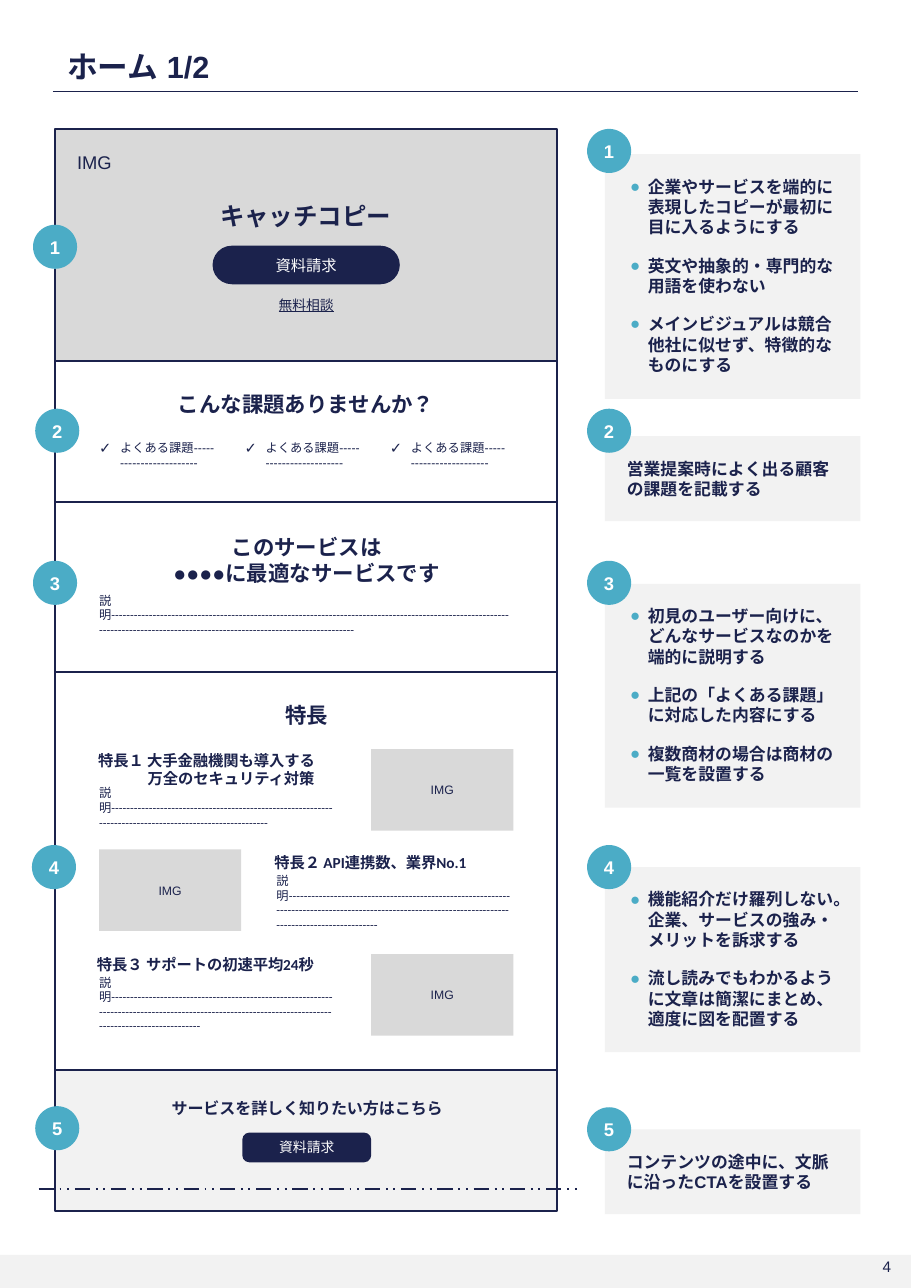
from pptx import Presentation
from pptx.dml.color import RGBColor
from pptx.enum.dml import MSO_LINE
from pptx.enum.lang import MSO_LANGUAGE_ID
from pptx.enum.shapes import MSO_CONNECTOR, MSO_SHAPE
from pptx.enum.text import MSO_ANCHOR, MSO_AUTO_SIZE, PP_ALIGN
from pptx.oxml.ns import qn
from pptx.util import Pt
from lxml import etree

RECT, ROUND, OVAL = MSO_SHAPE.RECTANGLE, MSO_SHAPE.ROUNDED_RECTANGLE, MSO_SHAPE.OVAL
LEFT, CENTER, RIGHT = PP_ALIGN.LEFT, PP_ALIGN.CENTER, PP_ALIGN.RIGHT
TOP, MIDDLE, BOTTOM = MSO_ANCHOR.TOP, MSO_ANCHOR.MIDDLE, MSO_ANCHOR.BOTTOM
FIT, FIXED = MSO_AUTO_SIZE.SHAPE_TO_FIT_TEXT, MSO_AUTO_SIZE.NONE
STRAIGHT, DASH = MSO_CONNECTOR.STRAIGHT, MSO_LINE.DASH_DOT_DOT
JAPANESE = MSO_LANGUAGE_ID.JAPANESE

PX = 9144
NAVY, TEAL, WHITE = "1B224C", "4BACC6", "FFFFFF"
PALE, GREY = "F2F2F2", "D9D9D9"

SECTIONS = [(117, 211, GREY), (328, 128, None), (456, 154, None),
            (610, 361, None), (971, 128, PALE)]
SECTION_BADGES = [(30, 204), (32, 371), (30, 509), (29, 767), (32, 1004)]
NOTES = [
    (117, 140, 222, ["企業やサービスを端的に表現したコピーが最初に目に入るようにする",
                     "英文や抽象的・専門的な用語を使わない",
                     "メインビジュアルは競合他社に似せず、特徴的なものにする"]),
    (371, 396, 77, ["営業提案時によく出る顧客の課題を記載する"]),
    (509, 530, 203, ["初見のユーザー向けに、どんなサービスなのかを端的に説明する",
                     "上記の「よくある課題」に対応した内容にする",
                     "複数商材の場合は商材の一覧を設置する"]),
    (767, 787, 168, ["機能紹介だけ羅列しない。企業、サービスの強み・メリットを訴求する",
                     "流し読みでもわかるように文章は簡潔にまとめ、適度に図を配置する"]),
    (1005, 1025, 77, ["コンテンツの途中に、文脈に沿ったCTAを設置する"]),
]
HEADINGS = [
    ((199, 182, 157, 27), ["キャッチコピー"], 16),
    ((160, 355, 236, 24), ["こんな課題ありませんか？"], 14),
    ((141, 485, 275, 47), ["このサービスは", "●●●●に最適なサービスです"], 14),
    ((259, 637, 39, 24), ["特長"], 14),
    ((154, 997, 250, 18), ["サービスを詳しく知りたい方はこちら"], 10.5),
]
FEATURES = [
    ((89, 681, 215, 34), "特長１ 大手金融機関も導入する\n万全のセキュリティ対策"),
    ((249, 774, 215, 17), "特長２ API連携数、業界No.1"),
    ((88, 867, 215, 17), "特長３ サポートの初速平均24秒"),
]
DESCRIPTIONS = [((90, 551, 376, 27), 174), ((90, 726, 215, 27), 104),
                ((251, 806, 215, 40), 148), ((90, 898, 215, 40), 148)]
IMAGE_SLOTS = [(337, 680), (90, 771), (337, 866)]


def emu(lengths):
    """Turn px lengths into EMU."""
    return [length * PX for length in lengths]


def color(hex_code):
    """Give the colour for a hex string."""
    return RGBColor.from_string(hex_code)


def add_bullet(para, mark, hang, margin, tint=None, percent=None):
    """Give a paragraph a hanging indent and, with a mark, a bullet."""
    props = para._p.get_or_add_pPr()
    props.set("marL", str(margin * PX))
    props.set("indent", str(-hang * PX))
    if tint:
        holder = etree.SubElement(props, qn("a:buClr"))
        etree.SubElement(holder, qn("a:srgbClr"), val=tint)
    if percent:
        etree.SubElement(props, qn("a:buSzPct"), val=str(percent * 1000))
    if mark:
        etree.SubElement(props, qn("a:buFont"), typeface="Arial")
        etree.SubElement(props, qn("a:buChar"), char=mark)


def write(box, texts, size, tint=NAVY, face="Arial", bold=False, align=LEFT,
          anchor=MIDDLE, inset=0, wrap=False, fit=FIXED, bullet=None, after=0,
          underline=False):
    """Fill a box with evenly formatted paragraphs."""
    frame = box.text_frame
    frame.word_wrap, frame.auto_size, frame.vertical_anchor = wrap, fit, anchor
    frame.margin_left = frame.margin_right = inset * PX
    frame.margin_top = frame.margin_bottom = inset * PX
    for index, text in enumerate(texts):
        para = frame.add_paragraph() if index else frame.paragraphs[0]
        para.text = text
        if bullet:
            add_bullet(para, *bullet)
        para.alignment = align
        para.space_after = Pt(after)
        font = para.font
        font.size, font.name, font.bold = Pt(size), face, bold
        font.underline, font.language_id = underline, JAPANESE
        font.color.rgb = color(tint)
        latin = para._p.pPr.find(qn("a:defRPr")).find(qn("a:latin"))
        latin.addnext(latin.makeelement(qn("a:ea"), {"typeface": face}))


def add_text(page, place, texts, size, **style):
    """Add a text box that grows with its text."""
    write(page.shapes.add_textbox(*emu(place)), texts, size, fit=FIT, **style)


def add_block(page, place, fill=None, line=None, kind=RECT, corner=None):
    """Add a flat preset shape."""
    block = page.shapes.add_shape(kind, *emu(place))
    block.shadow.inherit = False
    if corner is not None:
        block.adjustments[0] = corner
    if fill:
        block.fill.solid()
        block.fill.fore_color.rgb = color(fill)
    else:
        block.fill.background()
    if line:
        block.line.color.rgb = color(line)
        block.line.width = Pt(1.25)
    else:
        block.line.fill.background()
    return block


def add_rule(page, left, right, height, width, dash=None):
    """Add a horizontal line."""
    rule = page.shapes.add_connector(STRAIGHT, *emu((left, height, right, height)))
    rule.line.color.rgb = color(NAVY)
    rule.line.width = Pt(width)
    if dash:
        rule.line.dash_style = dash
    etree.SubElement(rule._element.spPr, qn("a:effectLst"))


def add_badge(page, left, top, number):
    """Add a numbered circle."""
    badge = add_block(page, (left, top, 40, 40), TEAL, kind=OVAL)
    write(badge, [str(number)], 12, WHITE, bold=True, align=CENTER)


def add_button(page, place, size, corner):
    """Add a rounded request button."""
    button = add_block(page, place, NAVY, kind=ROUND, corner=corner)
    write(button, ["資料請求"], size, WHITE, "Calibri", align=CENTER)


def add_note(page, number, badge_top, top, height, texts):
    """Add a grey remark panel with its badge."""
    panel = add_block(page, (549, top, 232, height), PALE)
    bullet = ("●", 16, 19, TEAL) if len(texts) > 1 else None
    write(panel, texts, 11, bold=True, anchor=TOP, inset=20, wrap=True,
          bullet=bullet, after=12)
    add_badge(page, 533, badge_top, number)


def add_frame(page):
    """Add the title, its rule and the footer."""
    add_block(page, (0, 1139, 827, 30), PALE)
    add_rule(page, 48, 779, 83, 1)
    title = page.shapes.title
    title.left, title.top, title.width, title.height = emu((61, 43, 138, 34))
    write(title, ["ホーム 1/2"], 20, bold=True, fit=FIT)
    add_text(page, (794, 1141, 15, 17), ["4"], 10, align=RIGHT)


def add_wireframe(page):
    """Add the home page layout on the left."""
    for index, (top, height, fill) in enumerate(SECTIONS):
        section = add_block(page, (50, top, 456, height), fill, NAVY)
        if index == 0:
            write(section, ["IMG"], 12, anchor=TOP, inset=20, wrap=True)
    for place, texts, size in HEADINGS:
        add_text(page, place, texts, size, bold=True, align=CENTER)
    add_text(page, (253, 269, 50, 15), ["無料相談"], 9, face="Calibri",
             align=CENTER, underline=True)
    for column in range(3):
        add_text(page, (90 + 132 * column, 400, 112, 27),
                 ["よくある課題" + "-" * 5 + "\n" + "-" * 19], 8, anchor=TOP,
                 bullet=("✓", 19, 19, None, 120))
    for place, count in DESCRIPTIONS:
        add_text(page, place, ["説明" + "-" * count], 8, face="Calibri",
                 anchor=BOTTOM, wrap=True, after=6)
    for place, text in FEATURES:
        add_text(page, place, [text], 10, face="Calibri", bold=True,
                 anchor=BOTTOM, wrap=True, bullet=(None, 45, 45), after=6)
    for left, top in IMAGE_SLOTS:
        slot = add_block(page, (left, top, 129, 74), GREY)
        write(slot, ["IMG"], 8, align=CENTER, inset=16, wrap=True)
    add_button(page, (193, 223, 170, 35), 10, 0.5)
    add_button(page, (220, 1028, 117, 27), 9, 0.24)
    add_rule(page, 35, 525, 1079, 1.25, DASH)
    for number, (left, top) in enumerate(SECTION_BADGES, 1):
        add_badge(page, left, top, number)


def main():
    """Build the slide and save it."""
    deck = Presentation()
    deck.slide_width, deck.slide_height = emu((827, 1169))
    page = deck.slides.add_slide(deck.slide_layouts[5])
    add_frame(page)
    add_wireframe(page)
    for number, note in enumerate(NOTES, 1):
        add_note(page, number, *note)
    deck.save("out.pptx")


if __name__ == "__main__":
    main()
